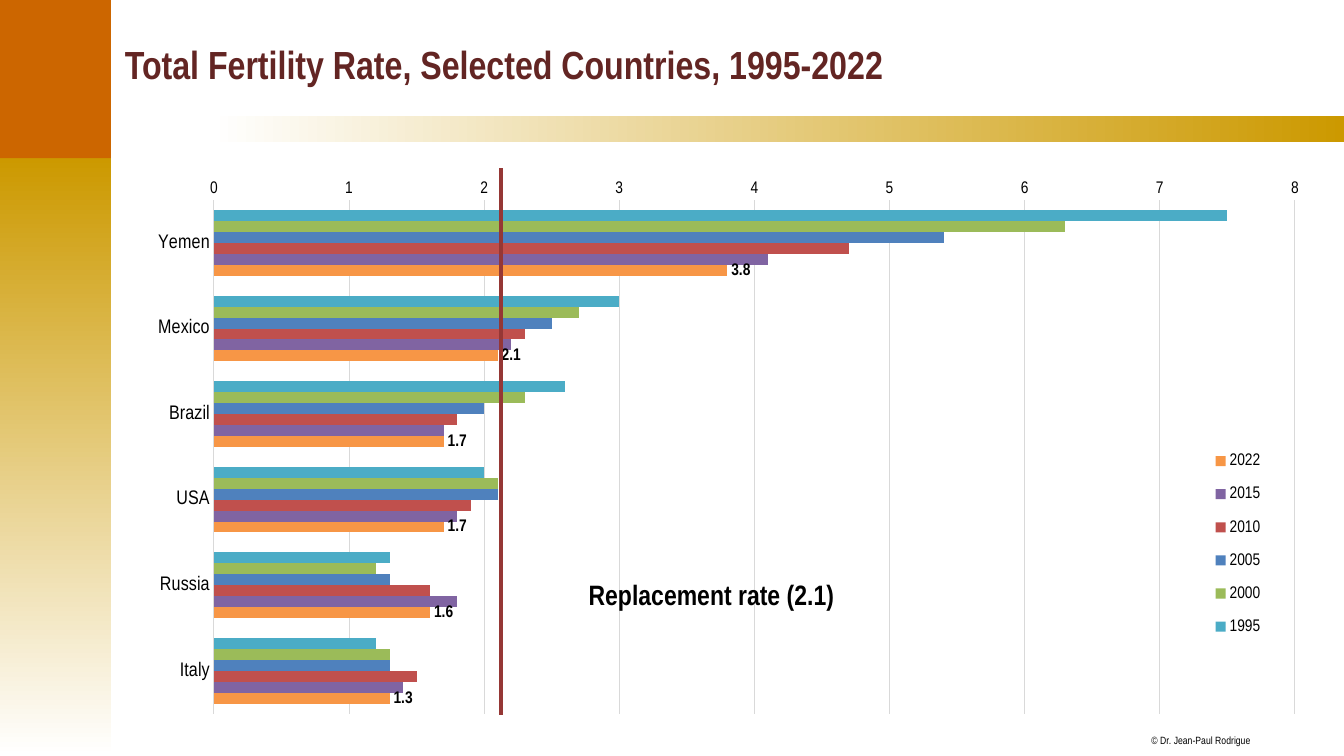
import pptx
import pptx.chart.data
import pptx.dml.color
import pptx.enum.chart
import pptx.enum.shapes
import pptx.enum.text
import pptx.oxml
import pptx.oxml.ns
import pptx.util

Inches, Pt = pptx.util.Inches, pptx.util.Pt
FONT = "Arial Narrow"
GOLD, ORANGE, WHITE, BLACK = "CC9900", "CC6600", "FFFFFF", "000000"
MAROON, RED, GREY = "632523", "953735", "D9D9D9"

COUNTRIES = ["Yemen", "Mexico", "Brazil", "USA", "Russia", "Italy"]
RATES = [  # year, colour, rate per country
    ("1995", "4BACC6", [7.5, 3, 2.6, 2, 1.3, 1.2]),
    ("2000", "9BBB59", [6.3, 2.7, 2.3, 2.1, 1.2, 1.3]),
    ("2005", "4F81BD", [5.4, 2.5, 2, 2.1, 1.3, 1.3]),
    ("2010", "C0504D", [4.7, 2.3, 1.8, 1.9, 1.6, 1.5]),
    ("2015", "8064A2", [4.1, 2.2, 1.7, 1.8, 1.8, 1.4]),
    ("2022", "F79646", [3.8, 2.1, 1.7, 1.7, 1.6, 1.3]),
]


def color(hex_code):
    return pptx.dml.color.RGBColor.from_string(hex_code)


def set_font(font, size, hex_code=BLACK, bold=False):
    font.name, font.size, font.bold = FONT, Pt(size), bold
    font.color.rgb = color(hex_code)


def add_text(s, text, x, y, w, h, size=12, hex_code=BLACK, bold=False,
             inset=None, middle=False, wrap=False):
    tf = s.shapes.add_textbox(Inches(x), Inches(y), Inches(w), Inches(h)).text_frame
    tf.word_wrap = wrap
    if inset is not None:
        tf.margin_left = tf.margin_right = Inches(inset)
        tf.margin_top = tf.margin_bottom = Inches(inset)
    if middle:
        tf.vertical_anchor = pptx.enum.text.MSO_ANCHOR.MIDDLE
    r = tf.paragraphs[0].add_run()
    r.text = text
    set_font(r.font, size, hex_code, bold)


def add_band(s, x, y, w, h, colors, angle=0):
    sp = s.shapes.add_shape(pptx.enum.shapes.MSO_SHAPE.RECTANGLE,
                            Inches(x), Inches(y), Inches(w), Inches(h))
    sp.shadow.inherit = False
    sp.line.fill.background()
    if len(colors) == 1:
        sp.fill.solid()
        sp.fill.fore_color.rgb = color(colors[0])
        return
    sp.fill.gradient()
    sp.fill.gradient_angle = angle
    for stop, position, hex_code in zip(sp.fill.gradient_stops, (0, 1), colors):
        stop.position = position
        stop.color.rgb = color(hex_code)


def set_layout(parent, x, y, w, h, inner=False):
    """Place a plot area or legend by fractions of the chart."""
    target = '<c:layoutTarget val="inner"/>' if inner else ""
    sizes = "".join(f'<c:{tag} val="{val}"/>'
                    for tag, val in zip("xywh", (x, y, w, h)))
    layout = pptx.oxml.parse_xml(
        f'<c:layout {pptx.oxml.ns.nsdecls("c")}><c:manualLayout>{target}'
        f'<c:xMode val="edge"/><c:yMode val="edge"/>{sizes}'
        '</c:manualLayout></c:layout>')
    for old in parent.findall(pptx.oxml.ns.qn("c:layout")):
        parent.remove(old)
    position = parent.find(pptx.oxml.ns.qn("c:legendPos"))
    if position is None:
        parent.insert(0, layout)
    else:
        position.addnext(layout)


def format_axes(chart):
    no_mark = pptx.enum.chart.XL_TICK_MARK.NONE
    cat, val = chart.category_axis, chart.value_axis
    for axis, size in ((cat, 14), (val, 12)):
        axis.major_tick_mark = axis.minor_tick_mark = no_mark
        set_font(axis.tick_labels.font, size)
    cat.reverse_order = True
    cat.has_major_gridlines = False
    val.minimum_scale, val.maximum_scale, val.major_unit = 0, 8, 1
    val.tick_labels.number_format = "0"
    val.tick_labels.number_format_is_linked = False
    val.has_major_gridlines = True
    val.format.line.fill.background()
    for line in (cat.format.line, val.major_gridlines.format.line):
        line.color.rgb = color(GREY)
        line.width = Pt(0.75)


def add_rates_chart(s, x, y, w, h):
    data = pptx.chart.data.CategoryChartData(number_format="0.0")
    data.categories = COUNTRIES
    for year, _, rates in RATES:
        data.add_series(year, rates)
    chart = s.shapes.add_chart(pptx.enum.chart.XL_CHART_TYPE.BAR_CLUSTERED,
                               Inches(x), Inches(y), Inches(w), Inches(h), data).chart
    chart.has_title = False
    set_font(chart.font, 10)
    format_axes(chart)

    # Bars
    plot = chart.plots[0]
    plot.gap_width, plot.overlap = 182, 0
    plot.vary_by_categories = False
    for series, (_, hex_code, _) in zip(plot.series, RATES):
        series.format.fill.solid()
        series.format.fill.fore_color.rgb = color(hex_code)
    labels = plot.series[len(RATES) - 1].data_labels
    labels.show_value = True
    labels.number_format, labels.number_format_is_linked = "0.0", False
    labels.position = pptx.enum.chart.XL_LABEL_POSITION.OUTSIDE_END
    set_font(labels.font, 12, bold=True)

    # Legend and layout
    chart.has_legend = True
    legend = chart.legend
    legend.position = pptx.enum.chart.XL_LEGEND_POSITION.BOTTOM
    legend.include_in_layout = False
    set_font(legend.font, 12)
    plot_area = chart.element.find(".//" + pptx.oxml.ns.qn("c:plotArea"))
    set_layout(plot_area, 0.085, 0.096, 0.892, 0.88, inner=True)
    set_layout(chart.element.find(".//" + pptx.oxml.ns.qn("c:legend")),
               0.9, 0.5, 0.06, 0.37)


def add_replacement_line(s, x, y, h):
    line = s.shapes.add_connector(pptx.enum.shapes.MSO_CONNECTOR.STRAIGHT,
                                  Inches(x), Inches(y), Inches(x), Inches(y + h))
    line.line.color.rgb = color(RED)
    line.line.width = Pt(3)
    properties = line.element.find(pptx.oxml.ns.qn("p:spPr"))
    properties.append(pptx.oxml.parse_xml(
        f'<a:effectLst {pptx.oxml.ns.nsdecls("a")}/>'))
    add_text(s, "Replacement rate (2.1)", x + 0.77, y + 4.01, 2.66, 0.44,
             size=20, bold=True)


def add_frame(s, w, h):
    side, corner = 1.1, 1.57
    add_band(s, 0, corner, side, h - corner, [GOLD, WHITE], angle=270)
    add_band(s, 2.09, 1.15, w - 2.09, 0.26, [WHITE, GOLD])
    add_band(s, 0, 0, side, corner, [ORANGE])
    add_text(s, "© Dr. Jean-Paul Rodrigue", 11.42, h - 0.22, 0.99, 0.13,
             size=7.5, inset=0)


def main():
    prs = pptx.Presentation()
    prs.slide_width, prs.slide_height = Inches(13.33), Inches(7.5)
    s = prs.slides.add_slide(prs.slide_layouts[6])
    add_frame(s, 13.33, 7.5)
    add_text(s, "Total Fertility Rate, Selected Countries, 1995-2022",
             1.14, 0.11, 11.97, 1.04, size=28, hex_code=MAROON, bold=True,
             middle=True, wrap=True)
    add_rates_chart(s, 1.1, 1.43, 12.02, 5.79)
    add_replacement_line(s, 4.97, 1.67, 5.42)
    prs.save("out.pptx")


if __name__ == "__main__":
    main()
